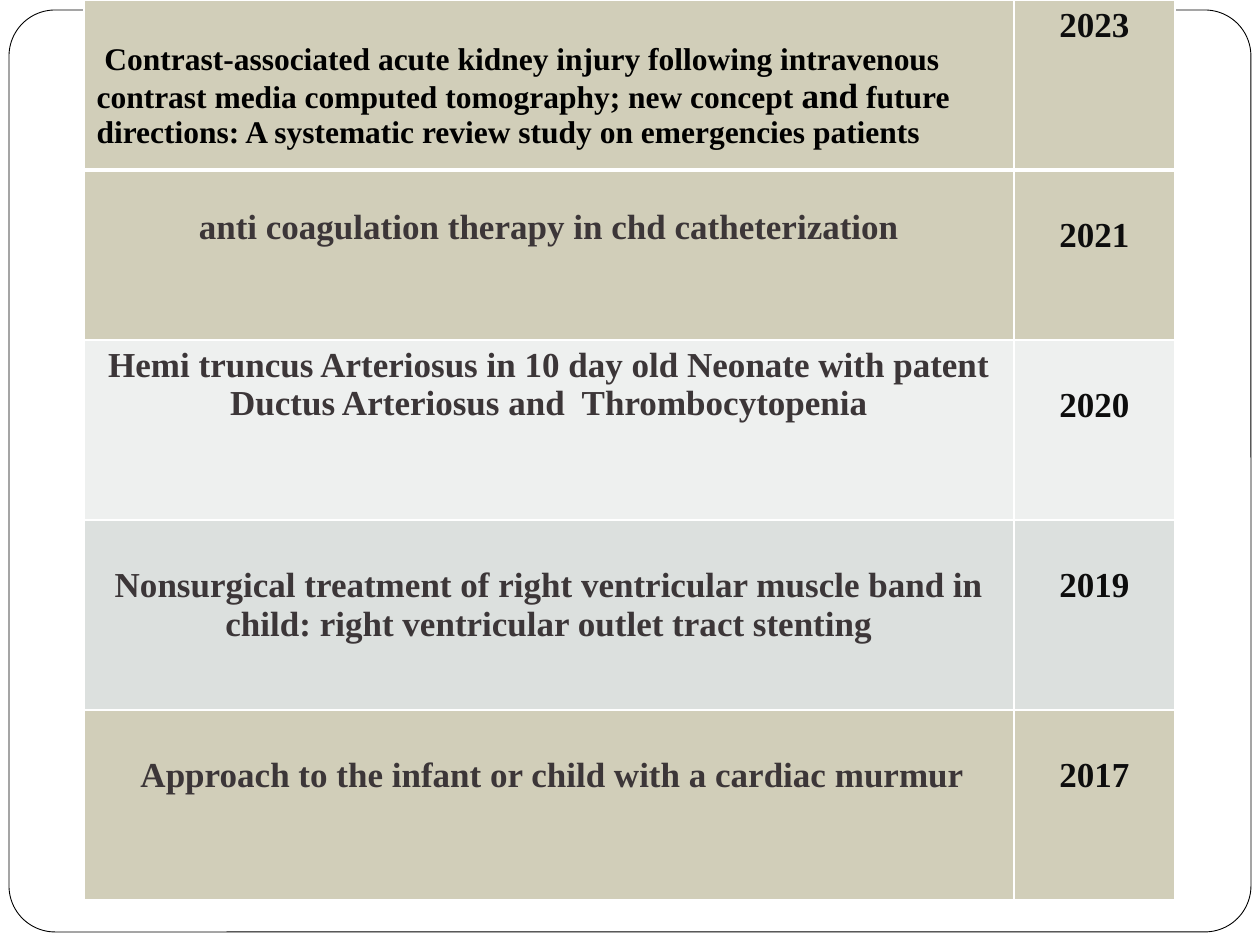
import pptx
import pptx.util
import pptx.dml.color
import pptx.enum.shapes
import pptx.enum.text
import pptx.oxml
import pptx.oxml.ns

SCALE = 914400 / 126
FONT = "Times New Roman"
HEX = {"white": "FFFFFF", "black": "000000", "sand": "D1CEB9", "pale": "EEF0EF",
       "grey": "DCE0DE", "ink": "3C3638", "year": "0D0D0D"}
COLS = (930, 161)
# Each row: height, fill, title inset, title runs, year inset, year
ROWS = [
    (170, "sand", 42,
     [(" Contrast-associated acute kidney injury following intravenous contrast media "
       "computed tomography; new concept ", 18), ("and", 20),
      (" future directions: A systematic review study on emergencies patients", 18)],
     6, "2023"),
    (170, "sand", 38, [("anti coagulation therapy in chd catheterization", 20)], 46, "2021"),
    (180, "pale", 6,
     [("Hemi truncus Arteriosus in 10 day old Neonate with patent "
       "Ductus Arteriosus and  Thrombocytopenia", 20)], 46, "2020"),
    (190, "grey", 46,
     [("Nonsurgical treatment of right ventricular muscle band in child: "
       "right ventricular outlet tract stenting", 20)], 46, "2019"),
    (190, "sand", 46,
     [(" Approach to the infant or child with a cardiac murmur", 20)], 46, "2017"),
]


def px(num):
    """Turn pixels into EMU."""
    return pptx.util.Emu(round(num * SCALE))


def tint(name):
    """Return a named colour."""
    return pptx.dml.color.RGBColor.from_string(HEX[name])


def paint(fill, name):
    """Fill with a solid named colour."""
    fill.solid()
    fill.fore_color.rgb = tint(name)


def frame(slide):
    """Draw the rounded page frame."""
    kind = pptx.enum.shapes.MSO_SHAPE.ROUNDED_RECTANGLE
    box = slide.shapes.add_shape(kind, px(9), px(10), px(1242), px(922))
    box.adjustments[0] = 0.05
    box.shadow.inherit = False
    paint(box.fill, "white")
    box.line.color.rgb = tint("black")
    box.line.width = pptx.util.Pt(0.5)


def edge(cell, base):
    """Give a cell white borders, with its bottom one base points wide."""
    props = cell._tc.get_or_add_tcPr()
    space = pptx.oxml.ns.nsdecls("a")
    for pos, (side, wide) in enumerate(zip("LRTB", (1, 1, 1, base))):
        props.insert(pos, pptx.oxml.parse_xml(
            f'<a:ln{side} {space} w="{wide * 12700}"><a:solidFill>'
            f'<a:srgbClr val="{HEX["white"]}"/></a:solidFill></a:ln{side}>'))


def write(cell, runs, ink, align, inset):
    """Write bold runs into a cell below a top inset."""
    cell.margin_top = px(inset)
    para = cell.text_frame.paragraphs[0]
    para.alignment = align
    for text, size in runs:
        run = para.add_run()
        run.text = text
        run.font.color.rgb = tint(ink)
        for key, val in {"name": FONT, "bold": True, "size": pptx.util.Pt(size)}.items():
            setattr(run.font, key, val)


def grid(slide):
    """Build the table of papers and years."""
    high = sum(row[0] for row in ROWS)
    table = slide.shapes.add_table(len(ROWS), len(COLS), px(84), px(0),
                                   px(sum(COLS)), px(high)).table
    for key in ("first_row", "horz_banding"):
        setattr(table, key, False)
    for col, wide in zip(table.columns, COLS):
        col.width = px(wide)
    mode = pptx.enum.text.PP_ALIGN
    for num, (tall, fill, drop, runs, inset, year) in enumerate(ROWS):
        table.rows[num].height = px(tall)
        left, right = table.cell(num, 0), table.cell(num, 1)
        first = num == 0
        write(left, runs, "black" if first else "ink",
              mode.LEFT if first else mode.CENTER, drop)
        write(right, [(year, 20)], "year", mode.CENTER, inset)
        for cell in (left, right):
            paint(cell.fill, fill)
            edge(cell, 3 if first else 1)


def main():
    """Build and save the slide."""
    deck = pptx.Presentation()
    deck.slide_width, deck.slide_height = px(1260), px(945)
    slide = deck.slides.add_slide(deck.slide_layouts[6])
    paint(slide.background.fill, "white")
    frame(slide)
    grid(slide)
    deck.save("out.pptx")


if __name__ == "__main__":
    main()
